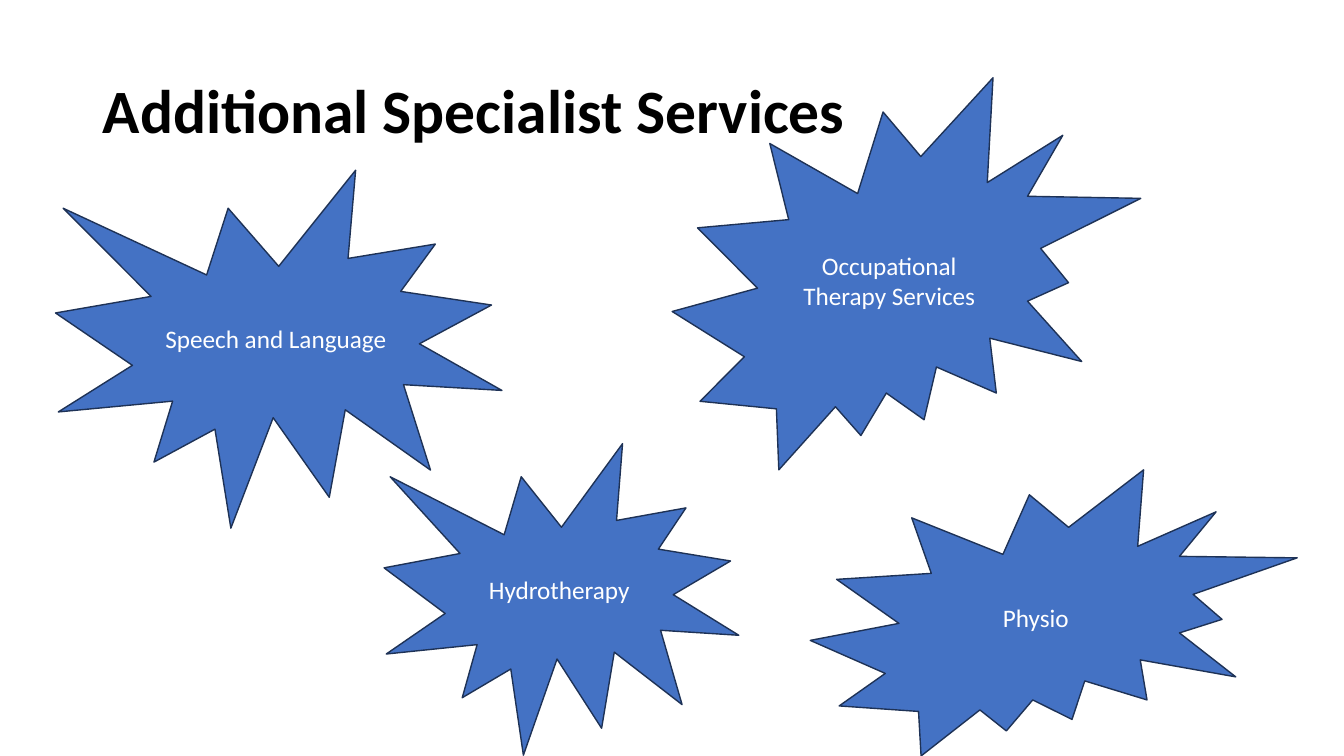
import pptx
import pptx.util
from pptx.dml.color import RGBColor
from pptx.enum.shapes import MSO_SHAPE
from pptx.enum.text import MSO_ANCHOR, PP_ALIGN

Cm = pptx.util.Cm
BLACK = RGBColor(0x00, 0x00, 0x00)
WHITE = RGBColor(0xFF, 0xFF, 0xFF)
BLUE = RGBColor(0x44, 0x72, 0xC4)
NAVY = RGBColor(0x1E, 0x32, 0x56)

HEADING_FONT = {"name": "Calibri", "size": pptx.util.Pt(44), "bold": True}
SERVICE_FONT = {"name": "Calibri", "size": pptx.util.Pt(18), "bold": False}

HEADING_BOX = (2.34, 1.02, 29.21, 3.68)
SERVICES = [
    ("Speech and Language", MSO_SHAPE.EXPLOSION1, (1.4, 4.29, 11.25, 9.02)),
    ("Occupational Therapy Services", MSO_SHAPE.EXPLOSION2, (16.94, 1.96, 11.81, 9.88)),
    ("Physio", MSO_SHAPE.EXPLOSION2, (20.42, 11.84, 12.27, 7.21)),
    ("Hydrotherapy", MSO_SHAPE.EXPLOSION1, (9.68, 11.18, 8.94, 7.85)),
]


def write_text(frame, wording, alignment, font_format, color):
    """Fill a text frame with one formatted, vertically centred paragraph."""
    frame.text = wording
    frame.word_wrap = True
    frame.vertical_anchor = MSO_ANCHOR.MIDDLE
    paragraph = frame.paragraphs[0]
    paragraph.alignment = alignment
    font = paragraph.runs[0].font
    for attribute, value in font_format.items():
        setattr(font, attribute, value)
    font.color.rgb = color
    return paragraph


def place_heading(slide, box, wording):
    """Move the title placeholder to the box and write the heading."""
    heading = slide.shapes.title
    heading.left, heading.top, heading.width, heading.height = map(Cm, box)
    paragraph = write_text(heading.text_frame, wording, PP_ALIGN.LEFT, HEADING_FONT, BLACK)
    paragraph.line_spacing = 0.9


def place_service(slide, box, wording, burst):
    """Draw one service burst with its label in the box."""
    service = slide.shapes.add_shape(burst, *map(Cm, box))
    service.shadow.inherit = False
    service.fill.solid()
    service.fill.fore_color.rgb = BLUE
    service.line.color.rgb = NAVY
    service.line.width = pptx.util.Pt(1)
    write_text(service.text_frame, wording, PP_ALIGN.CENTER, SERVICE_FONT, WHITE)


def main():
    """Build the services slide and save it."""
    deck = pptx.Presentation()
    deck.slide_width, deck.slide_height = Cm(33.87), Cm(19.05)
    slide = deck.slides.add_slide(deck.slide_layouts[5])
    place_heading(slide, HEADING_BOX, "Additional Specialist Services")
    for wording, burst, box in SERVICES:
        place_service(slide, box, wording, burst)
    deck.save("out.pptx")


if __name__ == "__main__":
    main()
